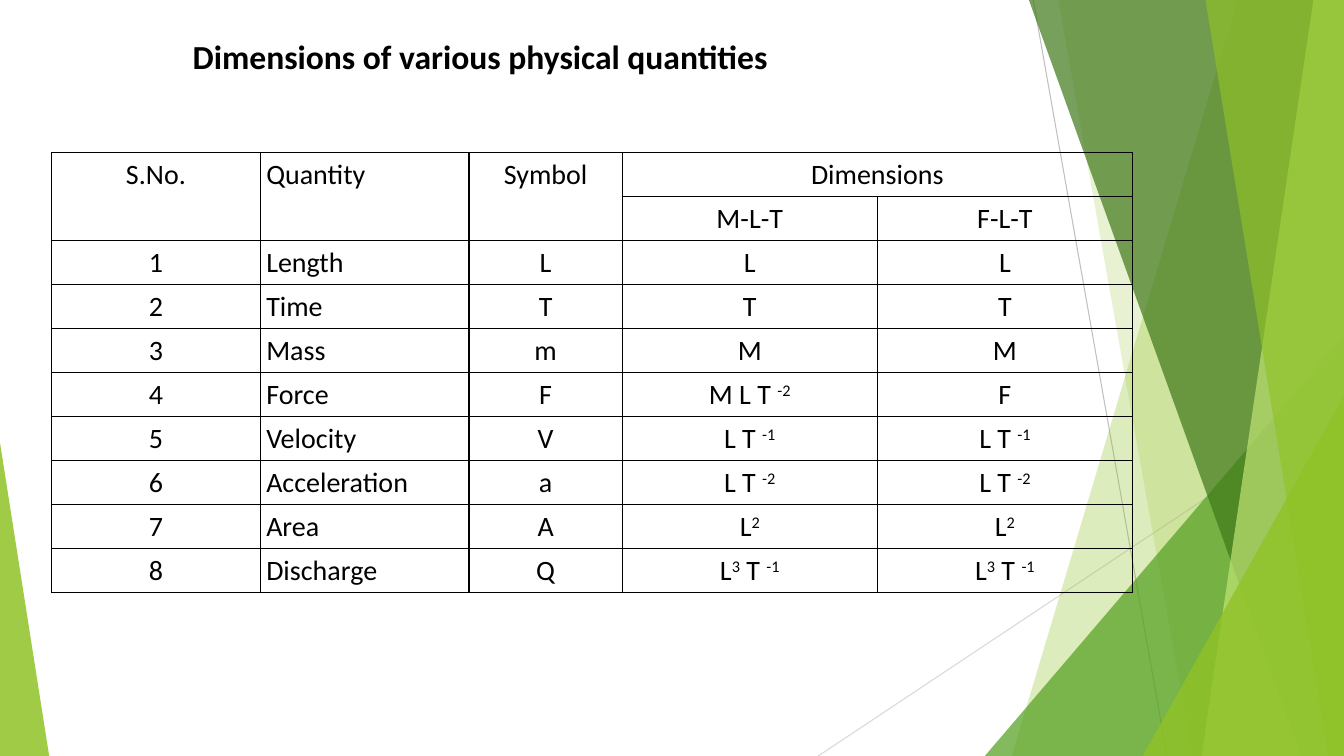
from lxml import etree
from pptx import Presentation
from pptx.dml.color import RGBColor
from pptx.enum.shapes import MSO_CONNECTOR, MSO_SHAPE
from pptx.enum.text import MSO_ANCHOR, MSO_AUTO_SIZE, PP_ALIGN
from pptx.oxml import parse_xml
from pptx.oxml.ns import nsdecls, qn
from pptx.util import Cm, Pt

# Content: text between bars is superscript
TITLE = "Dimensions of various physical quantities"
ROWS = [
    ("S.No.", "Quantity", "Symbol", "Dimensions", ""),
    ("", "", "", "M-L-T", "F-L-T"),
    ("1", "Length", "L", "L", "L"),
    ("2", "Time", "T", "T", "T"),
    ("3", "Mass", "m", "M", "M"),
    ("4", "Force", "F", "M L T |-2|", "F"),
    ("5", "Velocity", "V", "L T |-1|", "L T |-1|"),
    ("6", "Acceleration", "a", "L T |-2|", "L T |-2|"),
    ("7", "Area", "A", "L|2|", "L|2|"),
    ("8", "Discharge", "Q", "L|3| T |-1|", "L|3| T |-1|"),
]
MERGES = [((0, 0), (1, 0)), ((0, 1), (1, 1)), ((0, 2), (1, 2)), ((0, 3), (0, 4))]
COLUMN_WIDTHS = [5.26, 5.26, 3.86, 6.43, 6.43]
ROW_HEIGHT = 1.11
QUANTITY_COLUMN = 1

# Background, in cm
WIDTH, HEIGHT = 33.87, 19.05
RAYS = [
    ((26.04, 0), (29.41, HEIGHT), "BFBFBF"),
    ((WIDTH, 10.24), (20.62, HEIGHT), "D9D9D9"),
]
# band: top x, bottom x; triangle: left, top, width, apex; then colour, opacity %
FACETS = [
    ("band", (31.19, 25.5), "90C226", 30),
    ("band", (26.67, 30.05), "90C226", 20),
    ("triangle", (24.82, 8.46, 9.05, 1), "54A021", 72),
    ("band", (25.93, 32.79), "3F7819", 70),
    ("band", (33.1, 30.28), "C0E474", 70),
    ("band", (30.38, 33.48), "90C226", 65),
    ("triangle", (28.8, 9.98, 5.07, 1), "90C226", 80),
    ("triangle", (0, 11.15, 1.24, 0), "90C226", 85),
]


def rgb(color):
    return RGBColor.from_string(color)


def add_ray(shapes, start, end, color):
    ray = shapes.add_connector(MSO_CONNECTOR.STRAIGHT, *map(Cm, start + end))
    ray.line.color.rgb = rgb(color)
    ray.line.width = Pt(0.75)
    etree.SubElement(ray._element.spPr, qn("a:effectLst"))


def add_facet(shapes, kind, geometry, color, opacity):
    if kind == "band":
        top_x, bottom_x = geometry
        outline = shapes.build_freeform(Cm(top_x), 0)
        corners = [(WIDTH, 0), (WIDTH, HEIGHT), (bottom_x, HEIGHT)]
        outline.add_line_segments([(Cm(x), Cm(y)) for x, y in corners])
        facet = outline.convert_to_shape()
    else:
        left, top, width, apex = geometry
        facet = shapes.add_shape(MSO_SHAPE.ISOSCELES_TRIANGLE, Cm(left), Cm(top),
                                 Cm(width), Cm(HEIGHT - top))
        facet.adjustments[0] = apex
    facet.shadow.inherit = False
    facet.line.fill.background()
    facet.fill.solid()
    facet.fill.fore_color.rgb = rgb(color)
    solid = facet._element.spPr.find(qn("a:solidFill"))
    etree.SubElement(solid[0], qn("a:alpha"), val=str(opacity * 1000))


def style_cell(cell):
    for side in ("lnL", "lnR", "lnT", "lnB"):
        cell._tc.get_or_add_tcPr().append(parse_xml(
            f'<a:{side} {nsdecls("a")} w="12700"><a:solidFill>'
            f'<a:srgbClr val="000000"/></a:solidFill></a:{side}>'))
    cell.fill.background()
    cell.margin_left = cell.margin_right = Cm(0.15)
    cell.margin_top = cell.margin_bottom = 0


def write_cell(cell, text, align):
    paragraph = cell.text_frame.paragraphs[0]
    paragraph.alignment = align
    paragraph.line_spacing = 1.15
    paragraph.font.name = "Calibri"
    paragraph.font.size = Pt(20)
    paragraph.font.color.rgb = rgb("000000")
    for i, part in enumerate(text.split("|")):
        if part:
            run = paragraph.add_run()
            run.text = part
            if i % 2:
                run._r.get_or_add_rPr().set("baseline", "30000")


def add_quantities(shapes):
    table = shapes.add_table(len(ROWS), len(COLUMN_WIDTHS), Cm(1.3), Cm(3.84),
                             Cm(sum(COLUMN_WIDTHS)), Cm(ROW_HEIGHT * len(ROWS))).table
    table.first_row = table.horz_banding = False
    for column, width in zip(table.columns, COLUMN_WIDTHS):
        column.width = Cm(width)
    for r, texts in enumerate(ROWS):
        table.rows[r].height = Cm(ROW_HEIGHT)
        for c, text in enumerate(texts):
            cell = table.cell(r, c)
            style_cell(cell)
            write_cell(cell, text,
                       PP_ALIGN.JUSTIFY if c == QUANTITY_COLUMN else PP_ALIGN.CENTER)
    for first, last in MERGES:
        table.cell(*first).merge(table.cell(*last))


def add_title(title):
    title.left, title.top, title.width, title.height = map(Cm, (4.6, 0.76, 19.3, 1.28))
    frame = title.text_frame
    frame.text = TITLE
    frame.word_wrap = True
    frame.auto_size = MSO_AUTO_SIZE.SHAPE_TO_FIT_TEXT
    frame.vertical_anchor = MSO_ANCHOR.MIDDLE
    heading = frame.paragraphs[0]
    heading.alignment = PP_ALIGN.JUSTIFY
    heading.font.name = "Calibri"
    heading.font.size = Pt(24)
    heading.font.bold = True
    heading.font.color.rgb = rgb("000000")


def main():
    deck = Presentation()
    deck.slide_width, deck.slide_height = Cm(WIDTH), Cm(HEIGHT)
    slide = deck.slides.add_slide(deck.slide_layouts[5])
    for ray in RAYS:
        add_ray(slide.shapes, *ray)
    for facet in FACETS:
        add_facet(slide.shapes, *facet)
    add_quantities(slide.shapes)
    add_title(slide.shapes.title)
    deck.save("out.pptx")


if __name__ == "__main__":
    main()
